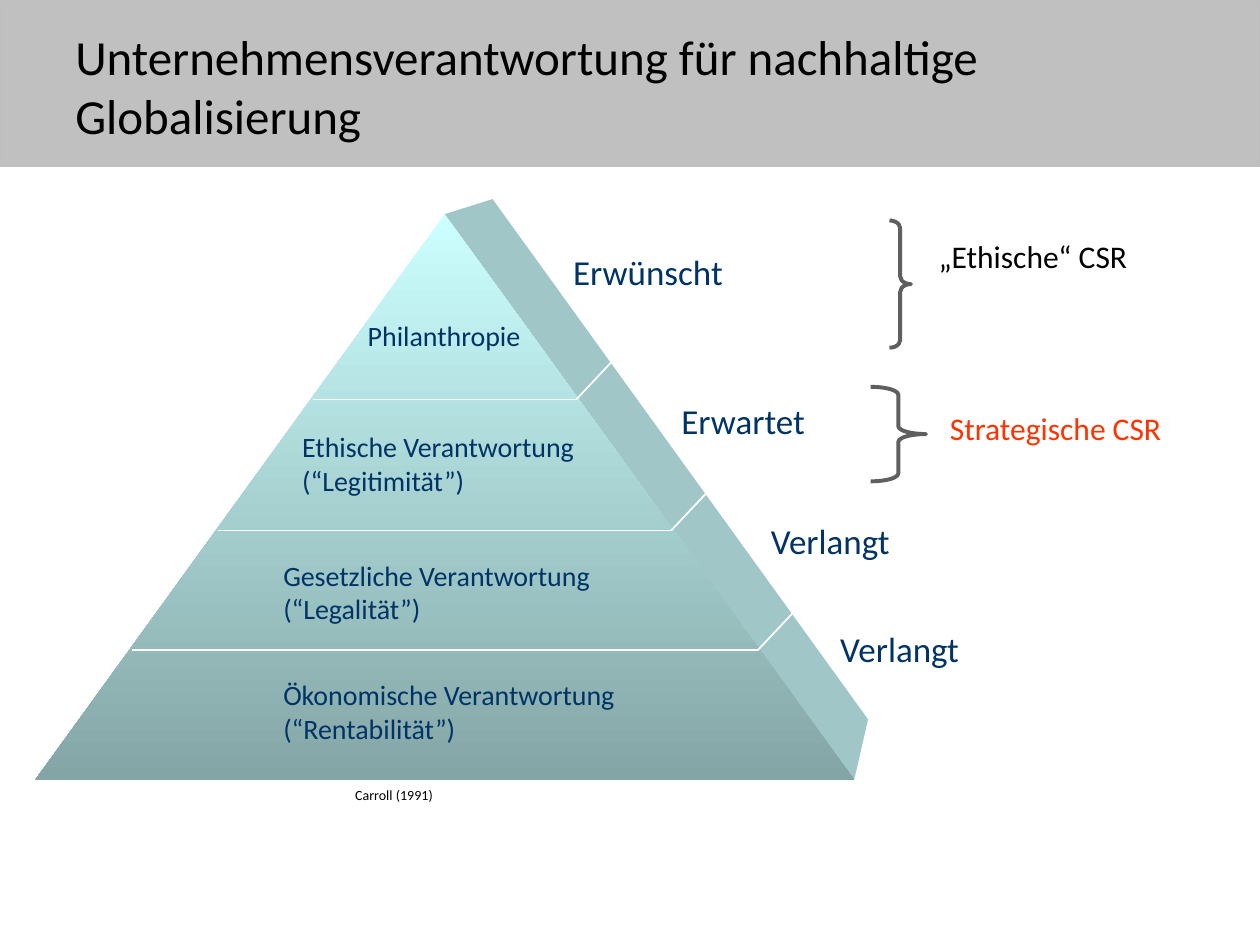
"""Draw the pyramid of corporate responsibility on a grid of 100 columns by 75 rows."""
from dataclasses import dataclass
from typing import Any, NamedTuple

from lxml.etree import SubElement
from pptx import Presentation
from pptx.dml.color import RGBColor
from pptx.enum.shapes import MSO_CONNECTOR, MSO_SHAPE
from pptx.enum.text import MSO_ANCHOR
from pptx.oxml.ns import qn
from pptx.util import Inches, Pt

COLS, ROWS = 100, 75
WIDE, HIGH = Inches(10), Inches(7.5)


@dataclass(frozen=True)
class Theme:
    face: str = "Calibri"
    black: str = "000000"
    white: str = "FFFFFF"
    navy: str = "003366"
    red: str = "FF3300"
    band: str = "C0C0C0"
    edge: str = "BFBFBF"
    brace: str = "5F5F5F"
    light: str = "CCFFFF"
    dark: str = "84A5A5"
    side: str = "A0C6C8"
    title: float = 28
    large: float = 20
    mid: float = 18
    body: float = 16
    note: float = 8


class Box(NamedTuple):
    col: float
    row: float
    wide: float
    high: float


class Label(NamedTuple):
    text: str
    box: Box
    size: float
    tint: str
    anchor: MSO_ANCHOR = MSO_ANCHOR.TOP


class Brace(NamedTuple):
    box: Box
    bend: float


class Point(NamedTuple):
    col: float
    row: float


LOOK = Theme()
BAND = Box(0, 0, 100, 13.1)
FRONT = Box(2.8, 17, 65, 44.9)
APEX = FRONT.col + FRONT.wide / 2
SIDE = (
    Point(APEX, FRONT.row),
    Point(39.1, 15.8),
    Point(68.9, 57.1),
    Point(FRONT.col + FRONT.wide, FRONT.row + FRONT.high),
)
LEVELS = (31.7, 42.1, 51.6)
INSET, DEPTH, RISE = 0.2, 3.3, 3.5
BRACES = (Brace(Box(70.6, 17.5, 1.7, 10.1), 0.355), Brace(Box(69.1, 30.7, 4.4, 7.5), 0.141))
LABELS = (
    Label("Unternehmensverantwortung für nachhaltige Globalisierung",
          Box(5, 0.5, 90, 12.5), LOOK.title, LOOK.black, MSO_ANCHOR.MIDDLE),
    Label("Carroll (1991)", Box(27.2, 61.9, 9.4, 2.4), LOOK.note, LOOK.black),
    Label("Philanthropie", Box(28.2, 24.8, 15.2, 4.7), LOOK.body, LOOK.navy),
    Label("Ethische Verantwortung (“Legitimität”)",
          Box(23, 33.6, 26.6, 6.6), LOOK.body, LOOK.navy),
    Label("Gesetzliche Verantwortung (“Legalität”)",
          Box(21.5, 43.8, 29.7, 7.1), LOOK.body, LOOK.navy),
    Label("Ökonomische Verantwortung (“Rentabilität”)",
          Box(21.5, 53.3, 32.8, 7.1), LOOK.body, LOOK.navy),
    Label("Erwünscht", Box(44.5, 19.4, 27.2, 3.8), LOOK.large, LOOK.navy),
    Label("Erwartet", Box(53.1, 31.2, 28.4, 3.8), LOOK.large, LOOK.navy),
    Label("Verlangt", Box(60.2, 40.7, 28.5, 3.8), LOOK.large, LOOK.navy),
    Label("Verlangt", Box(65.7, 49.3, 27.2, 3.8), LOOK.large, LOOK.navy),
    Label("„Ethische“ CSR", Box(73.5, 18.3, 22.1, 9.1), LOOK.mid, LOOK.black),
    Label("Strategische CSR", Box(74.4, 32, 21.9, 4), LOOK.mid, LOOK.red),
)


def place(col: float, row: float) -> tuple[int, int]:
    """Turn columns and rows into slide lengths."""
    return round(WIDE * col / COLS), round(HIGH * row / ROWS)


def frame(box: Box) -> tuple[int, int, int, int]:
    """Turn a grid box into left, top, width and height."""
    return place(box.col, box.row) + place(box.wide, box.high)


def apply(target: Any, values: dict[str, Any]) -> None:
    """Set each named value on the target."""
    for name, value in values.items():
        setattr(target, name, value)


def paint(shape: Any, fill: str = "", line: str = "", width: float = 1) -> None:
    """Give a shape a plain fill and outline, with no shadow."""
    shape.shadow.inherit = False
    if fill:
        shape.fill.solid()
        shape.fill.fore_color.rgb = RGBColor.from_string(fill)
    else:
        shape.fill.background()
    if line:
        shape.line.color.rgb = RGBColor.from_string(line)
        shape.line.width = Pt(width)
    else:
        shape.line.fill.background()


def draw_front(shapes: Any) -> None:
    """Draw the shaded front face."""
    face = shapes.add_shape(MSO_SHAPE.ISOSCELES_TRIANGLE, *frame(FRONT))
    paint(face)
    face.fill.gradient()
    face.fill.gradient_angle = 270
    for stop, (tint, spot) in zip(face.fill.gradient_stops, ((LOOK.light, 0), (LOOK.dark, 1))):
        stop.color.rgb = RGBColor.from_string(tint)
        stop.position = spot


def draw_side(shapes: Any) -> None:
    """Draw the side face."""
    first, *rest = (place(*point) for point in SIDE)
    path = shapes.build_freeform(*first)
    path.add_line_segments(rest, close=True)
    paint(path.convert_to_shape(), LOOK.side)


def draw_line(shapes: Any, start: Point, end: Point) -> None:
    """Draw one white dividing line."""
    line = shapes.add_connector(MSO_CONNECTOR.STRAIGHT, *place(*start), *place(*end))
    apply(line.line, {"width": Pt(1)})
    line.line.color.rgb = RGBColor.from_string(LOOK.white)
    SubElement(line._element.spPr, qn("a:effectLst"))


def draw_level(shapes: Any, row: float) -> None:
    """Divide the front and side faces at one row."""
    half = (row - FRONT.row) / FRONT.high * FRONT.wide / 2 - INSET
    left, right = Point(APEX - half, row), Point(APEX + half, row)
    draw_line(shapes, left, right)
    draw_line(shapes, right, Point(right.col + DEPTH, row - RISE))


def draw_brace(shapes: Any, brace: Brace) -> None:
    """Draw one right brace."""
    shape = shapes.add_shape(MSO_SHAPE.RIGHT_BRACE, *frame(brace.box))
    shape.adjustments[0] = brace.bend
    paint(shape, line=LOOK.brace, width=2.25)


def draw_label(shapes: Any, label: Label) -> None:
    """Write one label."""
    text = shapes.add_textbox(*frame(label.box)).text_frame
    apply(text, {"word_wrap": True, "vertical_anchor": label.anchor, "text": label.text})
    font = text.paragraphs[0].runs[0].font
    apply(font, {"name": LOOK.face, "size": Pt(label.size)})
    font.color.rgb = RGBColor.from_string(label.tint)


def main() -> None:
    """Build and save the slide."""
    deck = Presentation()
    apply(deck, {"slide_width": WIDE, "slide_height": HIGH})
    shapes = deck.slides.add_slide(deck.slide_layouts[6]).shapes
    paint(shapes.add_shape(MSO_SHAPE.RECTANGLE, *frame(BAND)), LOOK.band, LOOK.edge, 2)
    draw_side(shapes)
    draw_front(shapes)
    for row in LEVELS:
        draw_level(shapes, row)
    for brace in BRACES:
        draw_brace(shapes, brace)
    for label in LABELS:
        draw_label(shapes, label)
    deck.save("out.pptx")


if __name__ == "__main__":
    main()
